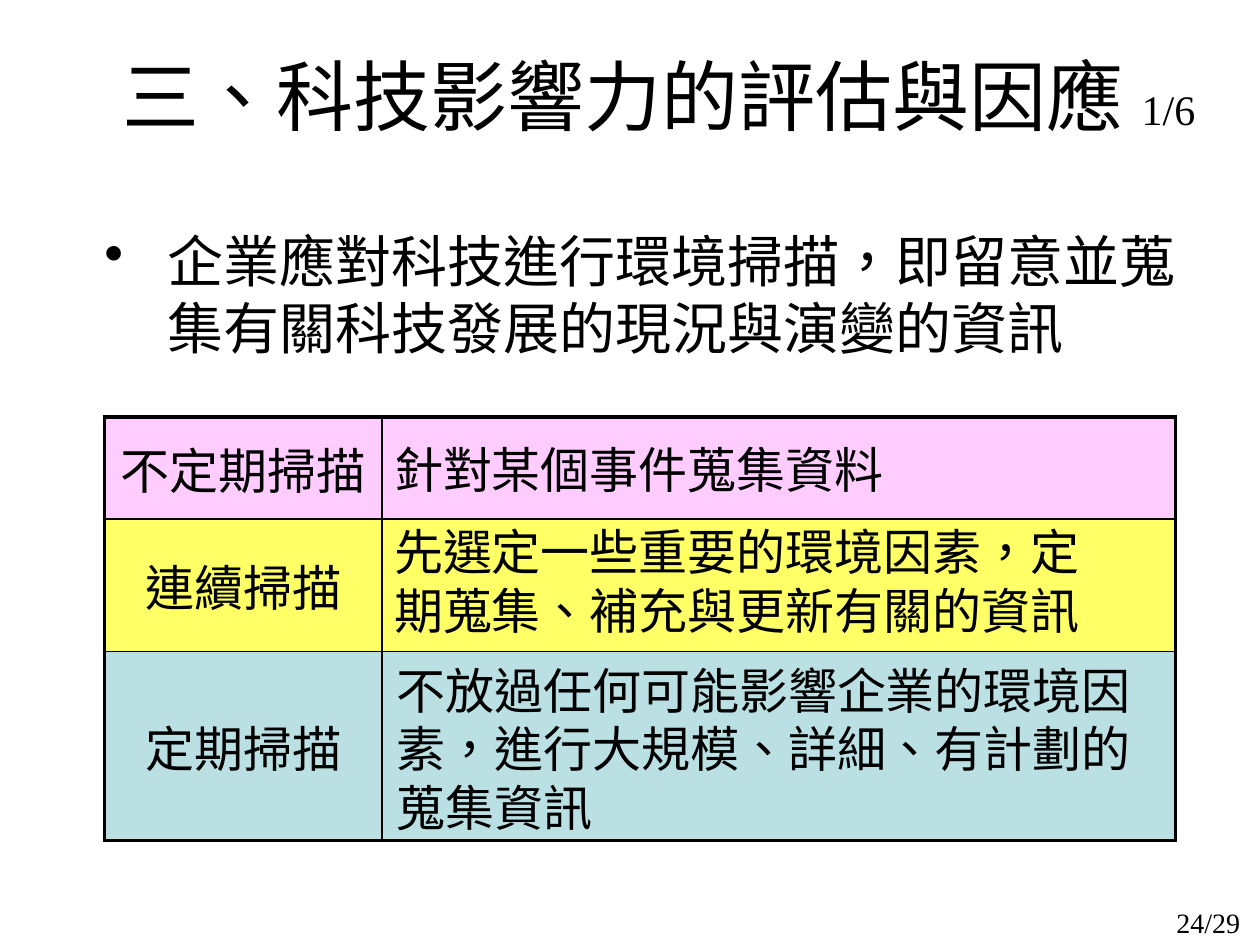
import pptx
import pptx.util
import pptx.dml.color
import pptx.enum.lang
import pptx.enum.text
import pptx.oxml
import pptx.oxml.ns

Inches = pptx.util.Inches
Pt = pptx.util.Pt
RGBColor = pptx.dml.color.RGBColor
ALIGN = pptx.enum.text.PP_ALIGN
ANCHOR = pptx.enum.text.MSO_ANCHOR
LANGUAGE = pptx.enum.lang.MSO_LANGUAGE_ID.TRADITIONAL_CHINESE

BLACK = RGBColor(0x00, 0x00, 0x00)
WHITE = RGBColor(0xFF, 0xFF, 0xFF)
PINK = RGBColor(0xFF, 0xCC, 0xFF)
YELLOW = RGBColor(0xFF, 0xFF, 0x66)
TEAL = RGBColor(0xBB, 0xE0, 0xE3)

FONT = "Times New Roman"
OUTER_LINE = 2.25
INNER_LINE = 1

SCANS = [
    ("不定期掃描", PINK, 0.81),
    ("連續掃描", YELLOW, 1.05),
    ("定期掃描", TEAL, 1.5),
]
DESCRIPTIONS = [
    ("針對某個事件蒐集資料", (2.2, 0.13, 4.09, 0.57), False),
    ("先選定一些重要的環境因素，定期蒐集、補充與更新有關的資訊", (2.2, 0.78, 5.83, 1.03), True),
    ("不放過任何可能影響企業的環境因素，進行大規模、詳細、有計劃的蒐集資訊", (2.22, 1.88, 6.28, 1.5), True),
]


def write(paragraph, text, size, align=ALIGN.LEFT):
    run = paragraph.add_run()
    run.text = text
    run.font.language_id = LANGUAGE
    paragraph.alignment = align
    paragraph.font.name = FONT
    paragraph.font.size = Pt(size)
    paragraph.font.color.rgb = BLACK
    return run


def add_frame(slide, box, wrap=True, anchor=ANCHOR.TOP):
    frame = slide.shapes.add_textbox(*map(Inches, box)).text_frame
    frame.word_wrap = wrap
    frame.vertical_anchor = anchor
    return frame


def add_title(slide, box):
    paragraph = add_frame(slide, box, anchor=ANCHOR.MIDDLE).paragraphs[0]
    write(paragraph, "三、科技影響力的評估與因應 ", 44, ALIGN.CENTER)
    part = paragraph.add_run()
    part.text = "1/6"
    part.font.size = Pt(24)


def add_statement(slide, box):
    paragraph = add_frame(slide, box).paragraphs[0]
    properties = paragraph._p.get_or_add_pPr()
    properties.set("marL", str(Inches(0.5)))
    properties.set("indent", str(Inches(-0.5)))
    properties.append(pptx.oxml.parse_xml(
        f'<a:buChar {pptx.oxml.ns.nsdecls("a")} char="•"/>'))
    write(paragraph, "企業應對科技進行環境掃描，即留意並蒐集有關科技發展的現況與演變的資訊", 32)


def set_borders(cell, widths):
    properties = cell._tc.get_or_add_tcPr()
    for position, (side, width) in enumerate(widths.items()):
        properties.insert(position, pptx.oxml.parse_xml(
            f'<a:ln{side} {pptx.oxml.ns.nsdecls("a")} w="{Pt(width)}">'
            f'<a:solidFill><a:srgbClr val="{BLACK}"/></a:solidFill></a:ln{side}>'))


def add_scan_table(slide, box):
    left, top = box[:2]
    table = slide.shapes.add_table(len(SCANS), 2, *map(Inches, box)).table
    table.first_row = False
    table.horz_banding = False
    for column, width in zip(table.columns, (2.2, 6.3)):
        column.width = Inches(width)

    last = len(SCANS) - 1
    for row, (label, color, height) in enumerate(SCANS):
        table.rows[row].height = Inches(height)
        for column in range(2):
            cell = table.cell(row, column)
            cell.fill.solid()
            cell.fill.fore_color.rgb = color
            cell.vertical_anchor = ANCHOR.MIDDLE
            set_borders(cell, {
                "L": OUTER_LINE if column == 0 else INNER_LINE,
                "R": OUTER_LINE if column == 1 else INNER_LINE,
                "T": OUTER_LINE if row == 0 else INNER_LINE,
                "B": OUTER_LINE if row == last else INNER_LINE,
            })
        write(table.cell(row, 0).text_frame.paragraphs[0], label, 28, ALIGN.CENTER)

    for description, (x, y, width, height), wrap in DESCRIPTIONS:
        frame = add_frame(slide, (left + x, top + y, width, height), wrap)
        frame.auto_size = pptx.enum.text.MSO_AUTO_SIZE.SHAPE_TO_FIT_TEXT
        write(frame.paragraphs[0], description, 28)


def add_page_number(slide, box):
    write(add_frame(slide, box).paragraphs[0], "24/29", 16, ALIGN.RIGHT)


def main():
    presentation = pptx.Presentation()
    presentation.slide_width = Inches(10)
    presentation.slide_height = Inches(7.5)
    slide = presentation.slides.add_slide(presentation.slide_layouts[6])
    slide.background.fill.solid()
    slide.background.fill.fore_color.rgb = WHITE
    add_page_number(slide, (9.1, 7.14, 0.84, 0.32))
    add_title(slide, (0.73, 0.13, 9, 1.25))
    add_statement(slide, (0.73, 1.75, 9, 1.29))
    add_scan_table(slide, (0.83, 3.31, 8.5, 3.36))
    presentation.save("out.pptx")


if __name__ == "__main__":
    main()
